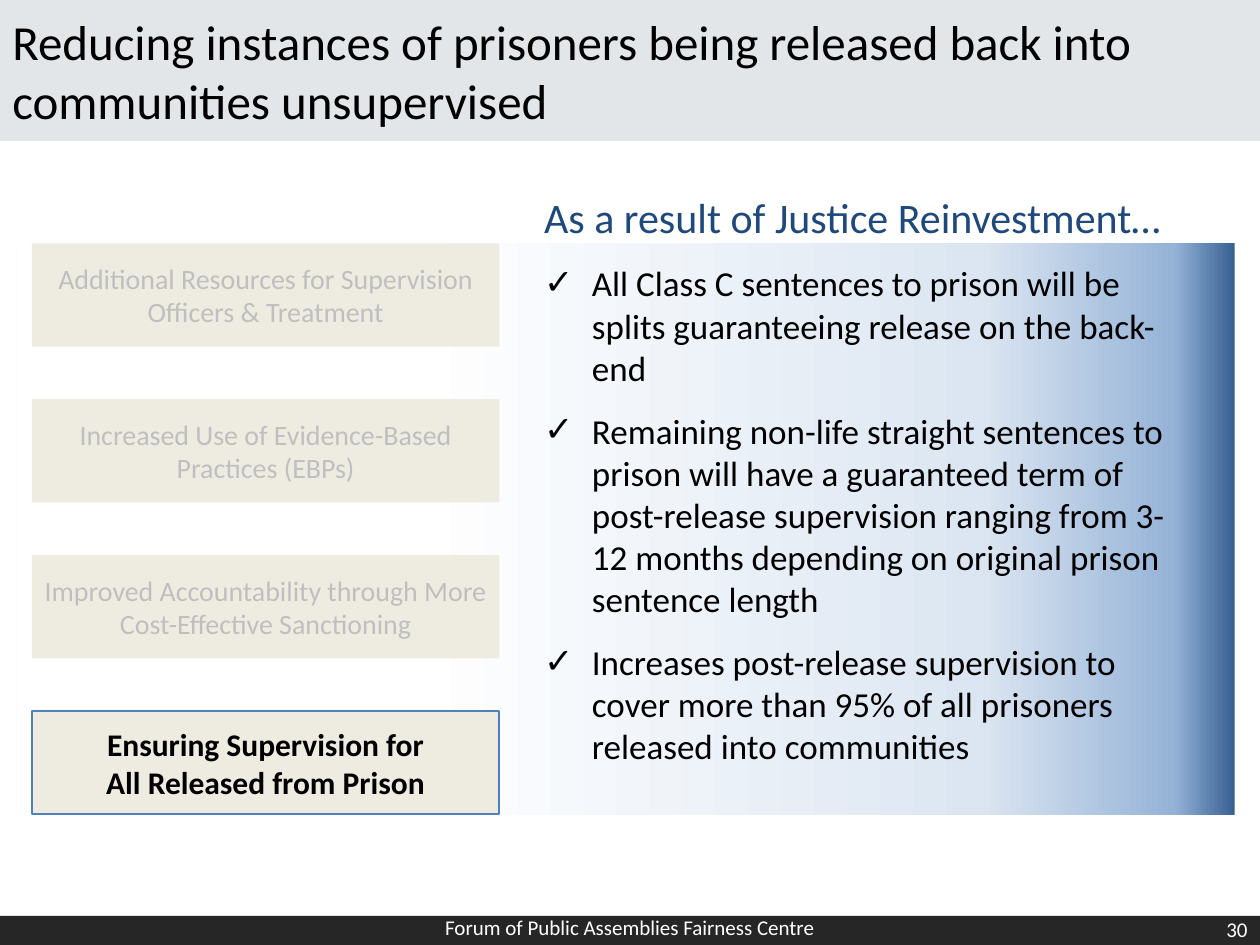
import pptx
import pptx.dml.color
import pptx.enum.shapes
import pptx.enum.text
import pptx.oxml
import pptx.oxml.ns
import pptx.util

W, H = pptx.util.Inches(10), pptx.util.Inches(7.5)
ALIGN = pptx.enum.text.PP_ALIGN
ANCHOR = pptx.enum.text.MSO_ANCHOR
FADE = [(0, "376092"), (5, "95B3D7"), (21, "DCE6F2"), (67, "FFFFFF")]
STRATEGIES = [
    "Additional Resources for Supervision Officers & Treatment",
    "Increased Use of Evidence-Based Practices (EBPs)",
    "Improved Accountability through More Cost-Effective Sanctioning",
]
FOCUS = ["Ensuring Supervision for", "All Released from Prison"]
RESULTS = [
    "All Class C sentences to prison will be splits guaranteeing release on the back-end",
    "Remaining non-life straight sentences to prison will have a guaranteed term of "
    "post-release supervision ranging from 3-12 months depending on original prison "
    "sentence length",
    "Increases post-release supervision to cover more than 95% of all prisoners "
    "released into communities",
]


def rgb(code):
    """Turn a hex string into a colour."""
    return pptx.dml.color.RGBColor.from_string(code)


def place(x, y, w, h):
    """Turn percentages of the slide into left, top, width and height."""
    return [int(share * side / 100) for share, side in zip((x, y, w, h), (W, H, W, H))]


def add_rect(slide, area, fill=None, line=None):
    """Add a plain rectangle with an optional solid fill and outline."""
    sp = slide.shapes.add_shape(pptx.enum.shapes.MSO_SHAPE.RECTANGLE, *place(*area))
    sp.shadow.inherit = False
    if fill:
        sp.fill.solid()
        sp.fill.fore_color.rgb = rgb(fill)
    if line:
        sp.line.color.rgb = rgb(line)
        sp.line.width = pptx.util.Pt(1)
    else:
        sp.line.fill.background()
    return sp


def add_fade(sp, stops):
    """Fill a shape with a gradient that starts at its right edge."""
    marks = "".join(
        f'<a:gs pos="{pos * 1000}"><a:srgbClr val="{code}"/></a:gs>' for pos, code in stops)
    sp.fill.background()
    old = sp._element.spPr.find(pptx.oxml.ns.qn("a:noFill"))
    old.getparent().replace(old, pptx.oxml.parse_xml(
        f'<a:gradFill {pptx.oxml.ns.nsdecls("a")}><a:gsLst>{marks}</a:gsLst>'
        '<a:lin ang="10800000" scaled="0"/></a:gradFill>'))


def add_text(slide, area):
    """Add an empty text box."""
    return slide.shapes.add_textbox(*place(*area))


def write(sp, lines, size, color, align=ALIGN.LEFT, anchor=ANCHOR.MIDDLE, bold=False, **para):
    """Write one paragraph per line into a shape."""
    tf = sp.text_frame
    tf.word_wrap = True
    tf.vertical_anchor = anchor
    tf.text = "\n".join(lines)
    font = {"name": "Calibri", "size": pptx.util.Pt(size), "bold": bold}
    for p in tf.paragraphs:
        for key, value in {"alignment": align, **para}.items():
            setattr(p, key, value)
        for r in p.runs:
            for key, value in font.items():
                setattr(r.font, key, value)
            r.font.color.rgb = rgb(color)


def add_ticks(sp, indent):
    """Give every paragraph a check mark and a hanging indent."""
    for p in sp.text_frame.paragraphs:
        pPr = p._p.get_or_add_pPr()
        pPr.set("marL", str(indent))
        pPr.set("indent", str(-indent))
        for mark in ('buFont {} typeface="Calibri"', 'buChar {} char="✓"'):
            pPr.append(pptx.oxml.parse_xml(
                f'<a:{mark.format(pptx.oxml.ns.nsdecls("a"))}/>'))


def add_strategies(slide):
    """Stack the faded strategies above the highlighted one."""
    areas = [(2.53, 25.75 + 16.5 * row, 37.1, 10.93) for row in range(len(STRATEGIES) + 1)]
    for area, label in zip(areas, STRATEGIES):
        write(add_rect(slide, area, "EEECE1"), [label], 16, "BFBFBF", ALIGN.CENTER)
    focus = add_rect(slide, areas[-1], "EEECE1", "4F81BD")
    write(focus, FOCUS, 18, "000000", ALIGN.CENTER, bold=True)


def add_results(slide):
    """Add the heading and the checked list of results."""
    write(add_text(slide, (42.2, 19.6, 55.8, 6.67)),
          ["As a result of Justice Reinvestment…"], 24, "1F497D", anchor=ANCHOR.TOP)
    sp = add_text(slide, (42.2, 27.07, 53, 55.2))
    write(sp, RESULTS, 20, "000000", anchor=ANCHOR.TOP, space_before=pptx.util.Pt(12))
    add_ticks(sp, pptx.util.Inches(0.38))


def main():
    """Build the slide and save it."""
    prs = pptx.Presentation()
    prs.slide_width, prs.slide_height = W, H
    slide = prs.slides.add_slide(prs.slide_layouts[6])
    add_rect(slide, (0, 96.93, 100, 3.07), "262626")
    add_fade(add_rect(slide, (1.3, 25.73, 96.7, 60.53)), FADE)
    write(add_rect(slide, (0, 0, 100, 14.93), "E2E6E9"),
          ["Reducing instances of prisoners being released back into communities unsupervised"],
          28, "000000")
    write(add_text(slide, (76.7, 95.6, 23.3, 5.33)), ["30"], 12, "FFFFFF", ALIGN.RIGHT)
    write(add_text(slide, (32.2, 95.33, 35.6, 5.6)),
          ["Forum of Public Assemblies Fairness Centre"], 12, "FFFFFF", ALIGN.CENTER)
    add_strategies(slide)
    add_results(slide)
    prs.save("out.pptx")


if __name__ == "__main__":
    main()
